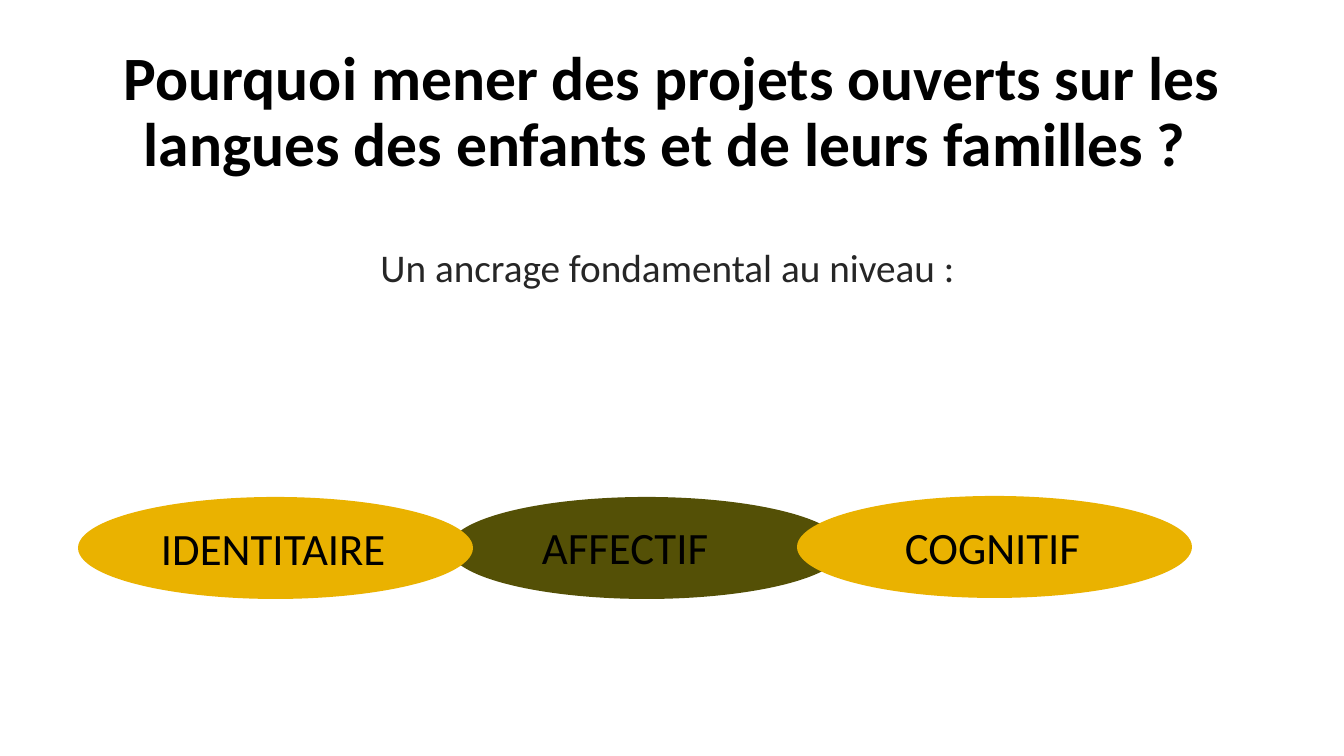
from pptx import Presentation, util as u
from pptx.dml.color import RGBColor
from pptx.enum import shapes, text

SLIDE_W, SLIDE_H = 1344, 756
PX = u.Inches(10) / SLIDE_W
FONT = "Calibri"

# Content: boxes are left, top, width, height in px
title = "Pourquoi mener des projets ouverts sur les langues des enfants et de leurs familles ? "
title_box = (93, 40, 1158, 147)
subtitle = "Un ancrage fondamental au niveau : "
subtitle_box = (0, 238, SLIDE_W, 58)

OVAL_SIZE = (395, 102)
LABEL_SIZE = (256, 65)
# Oval left and top, fill, from back to front
ovals = [
    (449, 497, "545006"),
    (78, 497, "EAB200"),
    (797, 496, "EAB200"),
]
# Label text, left, top
levels = [
    ("IDENTITAIRE", 151, 516),
    ("AFFECTIF", 532, 515),
    ("COGNITIF", 895, 515),
]


def px(*lengths):
    return [u.Emu(round(length * PX)) for length in lengths]


def color(hex_code):
    return RGBColor.from_string(hex_code)


def add_text(slide, words, box, size, hex_code="000000", bold=False,
             align=text.PP_ALIGN.LEFT, anchor=text.MSO_ANCHOR.TOP, spacing=1.0):
    frame = slide.shapes.add_textbox(*px(*box)).text_frame
    frame.word_wrap = True
    frame.vertical_anchor = anchor
    frame.margin_left, frame.margin_right = px(10, 10)
    frame.margin_top, frame.margin_bottom = px(5, 5)
    paragraph = frame.paragraphs[0]
    paragraph.alignment = align
    paragraph.line_spacing = spacing
    run = paragraph.add_run()
    run.text = words
    run.font.name = FONT
    run.font.size = u.Pt(size)
    run.font.bold = bold
    run.font.color.rgb = color(hex_code)


def add_oval(slide, left, top, hex_code):
    oval = slide.shapes.add_shape(shapes.MSO_SHAPE.OVAL, *px(left, top, *OVAL_SIZE))
    oval.shadow.inherit = False
    oval.fill.solid()
    oval.fill.fore_color.rgb = color(hex_code)
    oval.line.fill.background()


def main():
    deck = Presentation()
    deck.slide_width, deck.slide_height = px(SLIDE_W, SLIDE_H)
    slide = deck.slides.add_slide(deck.slide_layouts[6])

    # Title
    add_text(slide, title, title_box, 33, bold=True, align=text.PP_ALIGN.CENTER,
             anchor=text.MSO_ANCHOR.MIDDLE, spacing=0.9)

    # Overlapping ovals, then their labels
    for oval in ovals:
        add_oval(slide, *oval)
    for label, left, top in levels:
        add_text(slide, label, (left, top, *LABEL_SIZE), 24)

    # Subtitle
    add_text(slide, subtitle, subtitle_box, 21, "262626", align=text.PP_ALIGN.CENTER)

    deck.save("out.pptx")


if __name__ == "__main__":
    main()
